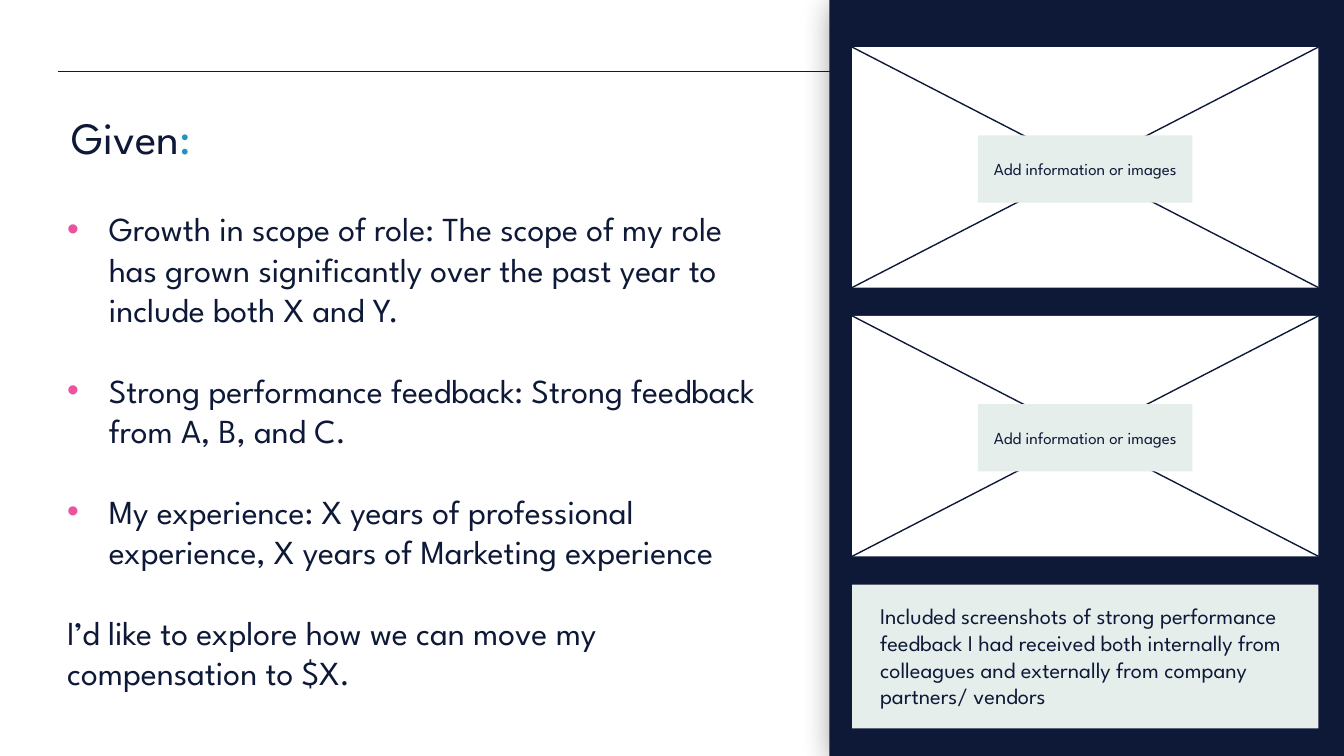
from lxml import etree
from pptx import Presentation
from pptx.dml.color import RGBColor
from pptx.enum import shapes, text
from pptx.oxml import ns
from pptx.util import Inches, Pt

NAVY = RGBColor(0x0E, 0x19, 0x38)
MINT = RGBColor(0xE5, 0xEE, 0xEB)
WHITE = RGBColor(0xFF, 0xFF, 0xFF)
BLUE = RGBColor(0x22, 0x91, 0xC4)
FONT = "League Spartan"
POINTS = [
    "Growth in scope of role: The scope of my role has grown significantly over the past year to include both X and Y.",
    "Strong performance feedback: Strong feedback from A, B, and C.",
    "My experience: X years of professional experience, X years of Marketing experience",
]
CLOSE = "I’d like to explore how we can move my compensation to $X."
NOTE = ("Included screenshots of strong performance feedback I had received both "
        "internally from colleagues and externally from company partners/ vendors")


def style(run, size, color=NAVY):
    """Set the font of a run."""
    run.font.name, run.font.size = FONT, Pt(size)
    run.font.color.rgb = color


def add(node, tag, **attrs):
    """Append a drawing element to an XML node."""
    return etree.SubElement(node, ns.qn(tag), attrs)


def rect(slide, box, fill):
    """Draw a plain filled rectangle."""
    shape = slide.shapes.add_shape(shapes.MSO_SHAPE.RECTANGLE, *map(Inches, box))
    shape.shadow.inherit = False
    shape.fill.solid()
    shape.fill.fore_color.rgb = fill
    shape.line.fill.background()
    return shape


def line(slide, *ends):
    """Draw a thin navy line."""
    link = slide.shapes.add_connector(shapes.MSO_CONNECTOR.STRAIGHT, *map(Inches, ends))
    link.line.color.rgb, link.line.width = NAVY, Pt(0.75)
    add(link._element.spPr, "a:effectLst")


def write(slide, box):
    """Add a wrapping text box and return its frame."""
    frame = slide.shapes.add_textbox(*map(Inches, box)).text_frame
    frame.word_wrap = True
    return frame


def label(slide, box, words, size, align, pad, high):
    """Draw a mint rectangle with a text box centred over it."""
    x, y, w, h = box
    rect(slide, box, MINT)
    frame = write(slide, (x + pad, y + (h - high) / 2, w - 2 * pad, high))
    frame.text = words
    frame.paragraphs[0].alignment = align
    style(frame.paragraphs[0].runs[0], size)


def panel(slide, box):
    """Draw the navy side panel with its soft shadow."""
    shape = rect(slide, box, NAVY)
    shape.rotation = 180
    glow = add(shape._element.spPr.find(ns.qn("a:effectLst")), "a:outerShdw",
               blurRad=str(Pt(17)), dist=str(Pt(3)), dir="2700000")
    add(add(glow, "a:srgbClr", val="000000"), "a:alpha", val="44000")


def card(slide, box):
    """Draw a crossed white card with a label in its middle."""
    x, y, w, h = box
    rect(slide, box, WHITE)
    line(slide, x, y + h, x + w, y)
    line(slide, x, y, x + w, y + h)
    wide, high = 0.46 * w, 0.28 * h
    label(slide, (x + (w - wide) / 2, y + (h - high) * 0.51, wide, high),
          "Add information or images", 9, text.PP_ALIGN.CENTER, 0, 0.25)


def title(slide, box):
    """Write the heading with its blue colon."""
    frame = write(slide, box)
    for part, color in (("Given", NAVY), (":", BLUE)):
        run = frame.paragraphs[0].add_run()
        run.text = part
        style(run, 24, color)


def body(slide, box):
    """Write the bulleted reasons and the closing request."""
    frame = write(slide, box)
    frame.margin_left = frame.margin_right = Inches(0.07)
    frame.margin_top = frame.margin_bottom = Inches(0.04)
    frame.text = "\n".join(POINTS + [CLOSE])
    for i, para in enumerate(frame.paragraphs):
        if i:
            para.space_before = Pt(21.6)
        if i < len(POINTS):
            props = para._p.get_or_add_pPr()
            props.set("marL", str(Inches(0.31)))
            props.set("indent", str(-Inches(0.31)))
            add(add(props, "a:buClr"), "a:srgbClr", val="EB539E")
            add(props, "a:buFont", typeface="Arial")
            add(props, "a:buChar", char="•")
        style(para.runs[0], 18)


def main():
    """Build and save the slide."""
    deck = Presentation()
    deck.slide_width = Inches(10)
    deck.slide_height = deck.slide_width * 9 // 16
    slide = deck.slides.add_slide(deck.slide_layouts[6])
    panel(slide, (6.17, 0, 3.83, 5.64))
    line(slide, 0.43, 0.53, 9.57, 0.53)
    title(slide, (0.43, 0.77, 5.72, 0.5))
    body(slide, (0.43, 1.51, 5.43, 4.01))
    left, top, wide, step = 6.34, 0.35, 3.47, 2
    label(slide, (left, top + 2 * step, wide, 1.07), NOTE, 12, text.PP_ALIGN.LEFT, 0.11, 0.91)
    for row in range(2):
        card(slide, (left, top + row * step, wide, 1.79))
    deck.save("out.pptx")


if __name__ == "__main__":
    main()
